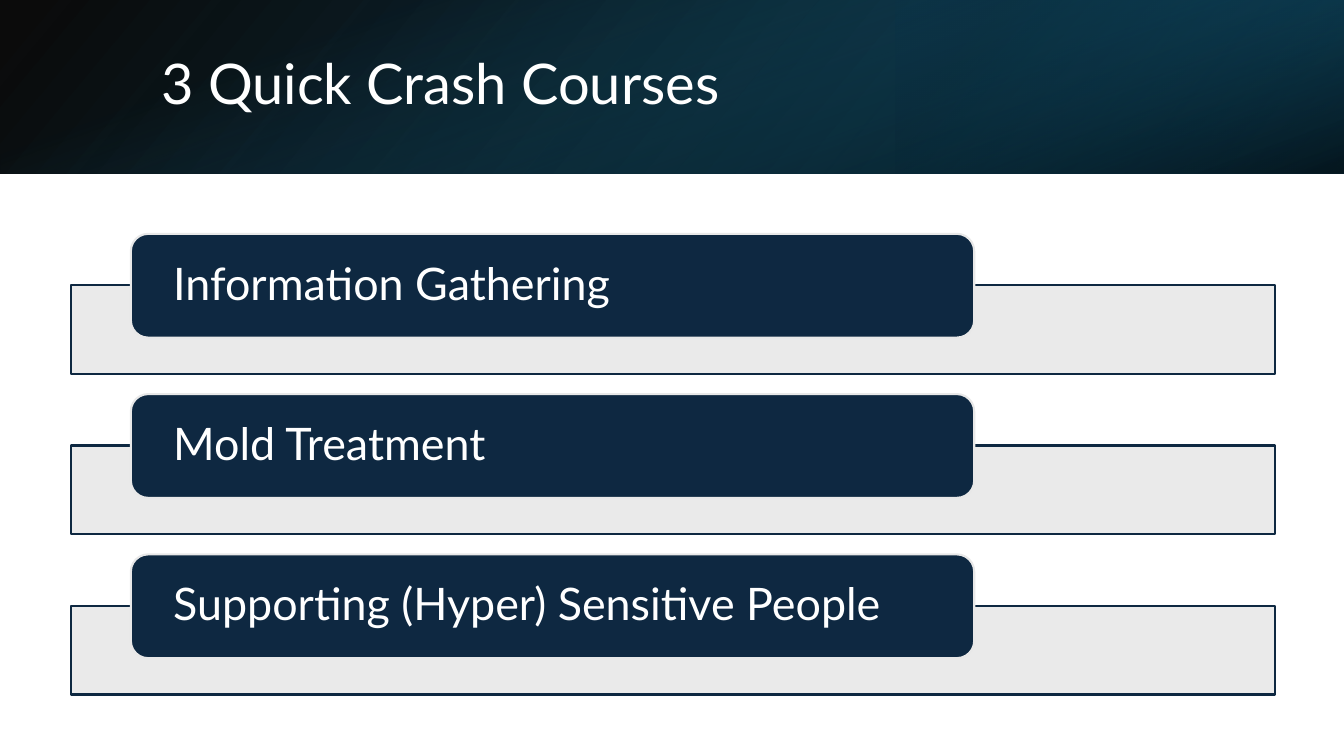
from dataclasses import dataclass

from lxml import etree
from pptx import Presentation
from pptx import util as u
from pptx.dml.color import RGBColor
from pptx.enum import shapes, text
from pptx.oxml.ns import qn


@dataclass(frozen=True)
class Theme:
    font: str = "Lato"
    title_size: int = 40
    item_size: int = 32
    line_width: float = 1.5
    white: str = "FFFFFF"
    black: str = "000000"
    navy: str = "0E2841"
    grey: str = "E8E8E8"
    teal: str = "156082"
    mid_teal: str = "104862"
    deep_teal: str = "0B3041"


THEME = Theme()
WIDTH, HEIGHT = 13.33, 7.5
COURSES = ["Information Gathering", "Mold Treatment", "Supporting (Hyper) Sensitive People"]


def set_alpha(color, percent):
    etree.SubElement(color, qn("a:alpha")).set("val", str(percent * 1000))


def add_box(s, box, kind=shapes.MSO_SHAPE.RECTANGLE, fill=None, line=None, alpha=None):
    sp = s.shapes.add_shape(kind, *map(u.Inches, box))
    sp.shadow.inherit = False
    if fill:
        sp.fill.solid()
        sp.fill.fore_color.rgb = RGBColor.from_string(fill)
        if alpha is not None:
            set_alpha(sp.element.spPr.find(".//" + qn("a:srgbClr")), alpha)
    if line:
        sp.line.color.rgb = RGBColor.from_string(line)
        sp.line.width = u.Pt(THEME.line_width)
    else:
        sp.line.fill.background()
    return sp


def add_gradient(s, box, stops, angle, rotation=0, flip=False):
    """Stops are (percent, colour, opacity percent); the angle runs clockwise."""
    sp = add_box(s, box)
    sp.rotation = rotation
    if flip:
        sp.element.spPr.find(qn("a:xfrm")).set("flipH", "1")
    sp.fill.gradient()
    sp.fill.gradient_angle = 360 - angle
    for stop, (percent, color, _) in zip(sp.fill.gradient_stops, stops):
        stop.position = percent / 100
        stop.color.rgb = RGBColor.from_string(color)
    for color, (_, _, alpha) in zip(sp.element.spPr.iter(qn("a:srgbClr")), stops):
        set_alpha(color, alpha)


def write(sp, words, size, color=THEME.white, inset=0.1, inset_y=0.05):
    tf = sp.text_frame
    tf.word_wrap = True
    tf.auto_size = text.MSO_AUTO_SIZE.NONE
    tf.vertical_anchor = text.MSO_ANCHOR.MIDDLE
    tf.margin_left = tf.margin_right = u.Inches(inset)
    tf.margin_top = tf.margin_bottom = u.Inches(inset_y)
    p = tf.paragraphs[0]
    p.alignment = text.PP_ALIGN.LEFT
    p.line_spacing = 0.9
    r = p.add_run()
    r.text = words
    r.font.name, r.font.size = THEME.font, u.Pt(size)
    r.font.color.rgb = RGBColor.from_string(color)


def add_banner(s, box, words):
    x, y, w, h = box
    add_gradient(s, box, [(0, THEME.black, 96), (100, THEME.mid_teal, 100)], 140, flip=True)
    add_gradient(s, (x + w * 2 / 3, y, w / 3, h),
                 [(19, THEME.deep_teal, 68), (100, THEME.teal, 79)], 320, rotation=180, flip=True)
    # Turned a quarter, this upright strip covers the whole banner.
    add_gradient(s, (x + (w - h) / 2, y + (h - w) / 2, h, w),
                 [(23, THEME.teal, 0), (99, THEME.black, 74)], 340, rotation=90)
    title = s.shapes.title
    title.left, title.top = u.Inches(x + 1.5), u.Inches(y + 0.38)
    title.width, title.height = u.Inches(10.98), u.Inches(0.96)
    write(title, words, THEME.title_size)
    title.element.getparent().append(title.element)  # bring to front


def add_course_list(s, box, courses):
    x, y, w, h = box
    tab_h, bar_h, bar_drop = 1.03, 0.88, 0.51
    pitch = (h - bar_drop - bar_h) / (len(courses) - 1)
    for i, course in enumerate(courses):
        top = y + i * pitch
        add_box(s, (x, top + bar_drop, w, bar_h), fill=THEME.grey, line=THEME.navy, alpha=90)
        tab = add_box(s, (x + w * 0.05, top, w * 0.7, tab_h),
                      shapes.MSO_SHAPE.ROUNDED_RECTANGLE, THEME.navy, THEME.grey)
        write(tab, course, THEME.item_size, inset=0.37, inset_y=0)


def main():
    prs = Presentation()
    prs.slide_width, prs.slide_height = u.Inches(WIDTH), u.Inches(HEIGHT)
    s = prs.slides.add_slide(prs.slide_layouts[5])
    add_banner(s, (0, 0, WIDTH, 1.72), "3 Quick Crash Courses")
    add_course_list(s, (0.7, 2.32, 11.95, 4.57), COURSES)
    prs.save("out.pptx")


if __name__ == "__main__":
    main()
